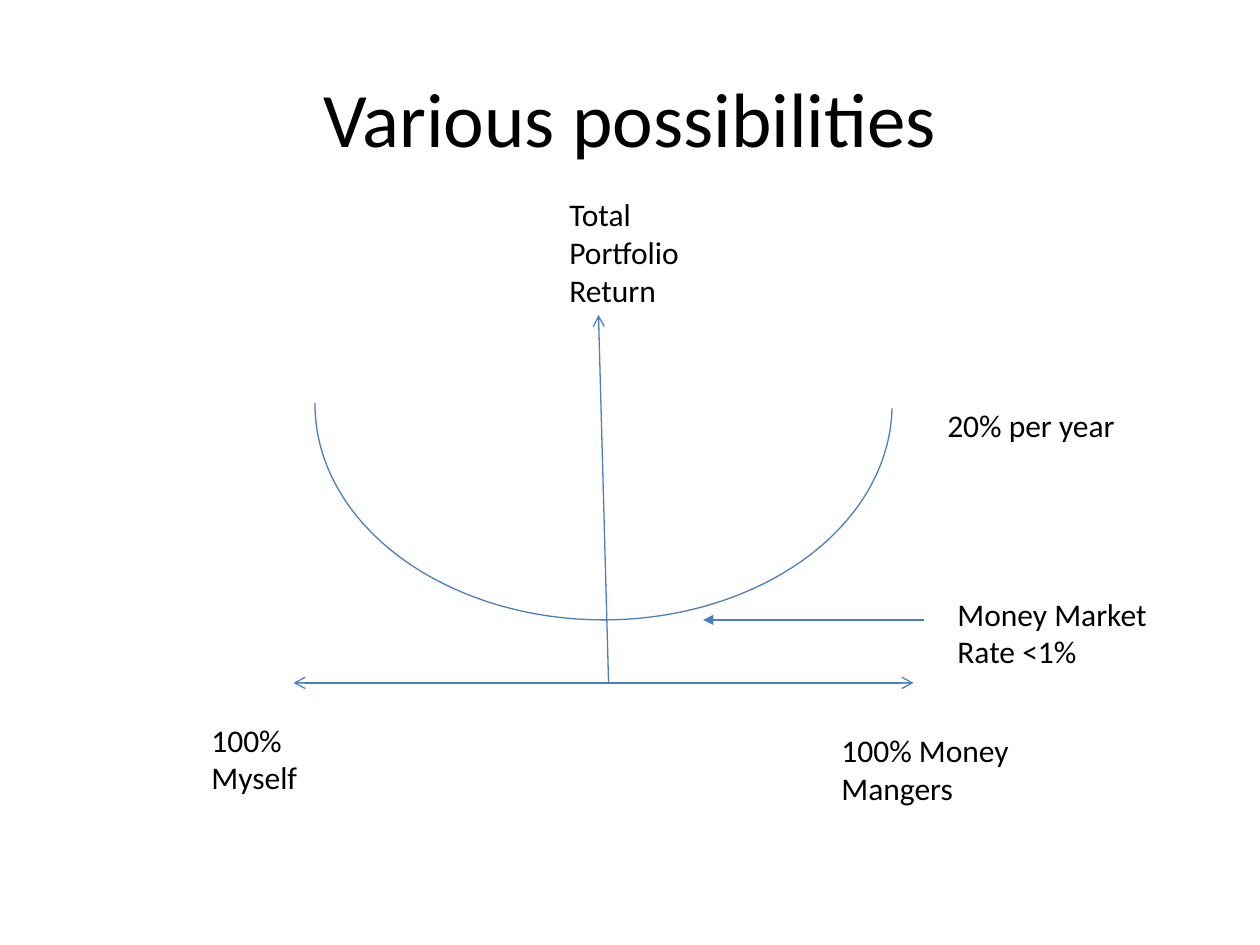
import pptx
import pptx.util
import pptx.dml.color
import pptx.enum.shapes
import pptx.enum.text
import pptx.oxml.ns
import lxml.etree

Inches = pptx.util.Inches
HUES = {"ink": "000000", "line": "4B7EBC"}


def hue(name):
    """Return a named colour."""
    return pptx.dml.color.RGBColor.from_string(HUES[name])


def write(frame, text, size):
    """Add one run of text to a frame."""
    run = frame.paragraphs[0].add_run()
    run.text = text
    run.font.name = "Calibri"
    run.font.size = pptx.util.Pt(size)
    run.font.color.rgb = hue("ink")


def stroke(shape):
    """Give a line or outline its colour and width."""
    shape.line.color.rgb = hue("line")
    shape.line.width = pptx.util.Pt(0.75)


def arrow(slide, start, end, head=None, tail=None):
    """Draw a straight arrow with optional heads at its ends."""
    kind = pptx.enum.shapes.MSO_CONNECTOR.STRAIGHT
    link = slide.shapes.add_connector(kind, *map(Inches, (*start, *end)))
    stroke(link)
    qn = pptx.oxml.ns.qn
    props = link._element.spPr
    line = props.find(qn("a:ln"))
    for tag, style in (("a:headEnd", head), ("a:tailEnd", tail)):
        if style:
            lxml.etree.SubElement(line, qn(tag)).set("type", style)
    lxml.etree.SubElement(props, qn("a:effectLst"))


def label(slide, text, x, y, w, h):
    """Place a wrapped label."""
    frame = slide.shapes.add_textbox(*map(Inches, (x, y, w, h))).text_frame
    frame.word_wrap = True
    frame.auto_size = pptx.enum.text.MSO_AUTO_SIZE.SHAPE_TO_FIT_TEXT
    write(frame, text, 18)


def curve(slide, x, y, w, h):
    """Draw the lower half of an oval."""
    kind = pptx.enum.shapes.MSO_SHAPE.ARC
    arc = slide.shapes.add_shape(kind, *map(Inches, (x, y, w, h)))
    arc.shadow.inherit = False
    arc.fill.background()
    stroke(arc)
    arc.adjustments[0] = 107.83
    arc.adjustments[1] = 215.53
    arc._element.spPr.find(pptx.oxml.ns.qn("a:xfrm")).set("flipV", "1")


def heading(slide, x, y, w, h):
    """Place and format the title."""
    title = slide.shapes.title
    title.left, title.top, title.width, title.height = map(Inches, (x, y, w, h))
    frame = title.text_frame
    frame.vertical_anchor = pptx.enum.text.MSO_ANCHOR.MIDDLE
    write(frame, "Various possibilities", 44)
    frame.paragraphs[0].alignment = pptx.enum.text.PP_ALIGN.CENTER


def graph(slide, x, y):
    """Draw the return curve with its axes and labels."""
    base, low = y + 3.92, y + 3.42
    arrow(slide, (x + 0.83, base), (x + 5.75, base), "arrow", "arrow")
    arrow(slide, (x + 3.33, base), (x + 3.25, y + 1), tail="arrow")
    curve(slide, x + 1, y, 4.58, 3.42)
    arrow(slide, (x + 4.08, low), (x + 5.83, low), head="triangle")
    for text, dx, dy, w, h in (
        ("100% Myself", 0.08, 4.17, 1.33, 0.71),
        ("100% Money Mangers", 5.08, 4.25, 1.92, 0.71),
        ("Total Portfolio Return", 2.92, 0, 1.5, 1.01),
        ("Money Market Rate <1%", 6, 3.17, 1.75, 0.71),
        ("20% per year", 5.92, 1.67, 1.83, 0.4),
    ):
        label(slide, text, x + dx, y + dy, w, h)


def main():
    """Build and save the deck."""
    deck = pptx.Presentation()
    deck.slide_width, deck.slide_height = Inches(10), Inches(7.5)
    slide = deck.slides.add_slide(deck.slide_layouts[5])
    heading(slide, 0.5, 0.3, 9, 1.25)
    graph(slide, 1.5, 1.5)
    deck.save("out.pptx")


if __name__ == "__main__":
    main()
